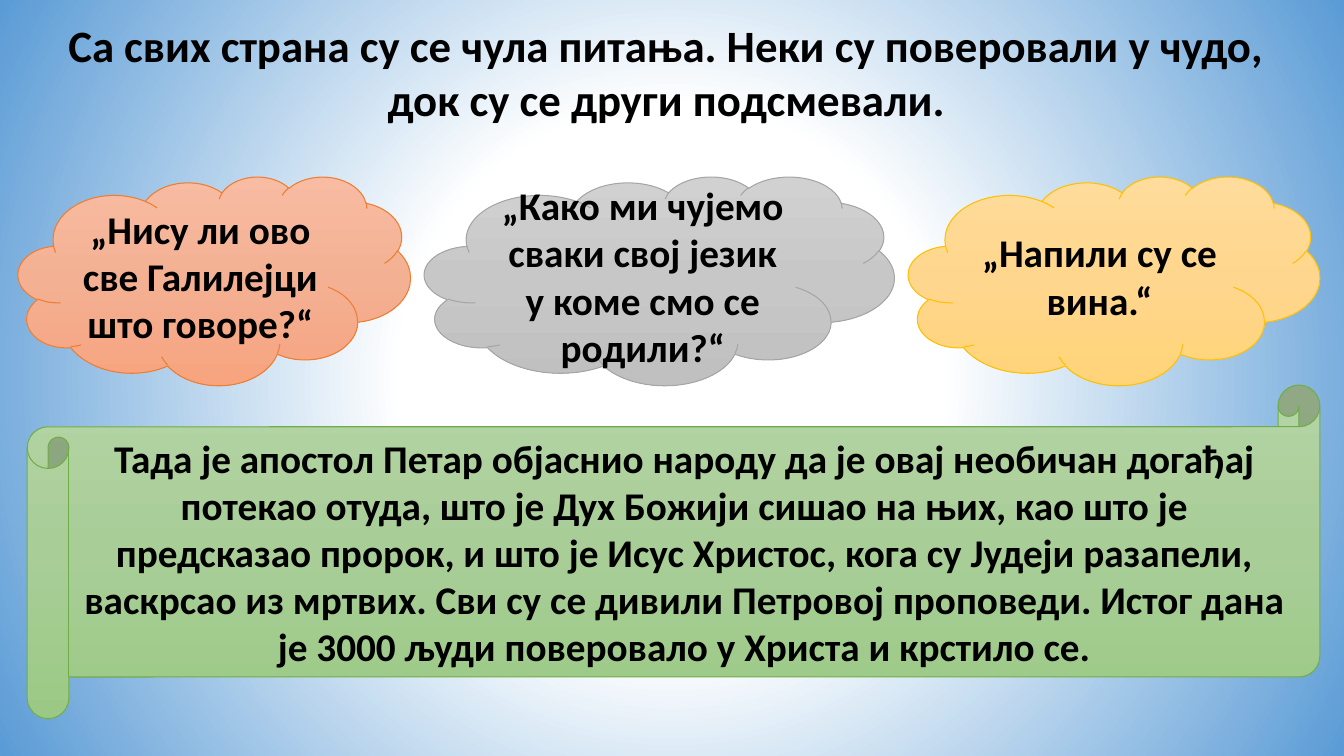
from lxml.etree import SubElement
from pptx import Presentation
from pptx.dml.color import RGBColor
from pptx.enum.shapes import MSO_SHAPE as Preset
from pptx.enum.text import MSO_ANCHOR as Anchor, PP_ALIGN as Align
from pptx.oxml.ns import qn
from pptx.util import Inches, Pt

FONT = "Calibri"
COLORS = {
    "text": "000000",
    "background": ["FFFFFF", "FFFFFF", "5A9BD5"],
    "orange": ["F7BCA2", "F4B093", "F7A47F"],
    "orange_line": "ED7D31",
    "gray": ["D1D1D1", "C7C7C7", "C0C0C0"],
    "gray_line": "A5A5A5",
    "gold": ["FFDC9B", "FFD68D", "FFD478"],
    "gold_line": "FFC000",
    "green": ["B4D4A5", "A8CD97", "9BC985"],
    "green_line": "70AD47",
}
HEADING = ("Са свих страна су се чула питања. Неки су поверовали у чудо, "
           "док су се други подсмевали.")
CLOUD_TOP, CLOUD_HEIGHT = 1.75, 2.07
# left, width, colour, question
CLOUDS = [
    (4.21, 4.66, "gray", "„Како ми чујемо сваки свој језик у коме смо се родили?“"),
    (9.01, 4.08, "gold", "„Напили су се вина.“"),
    (0.18, 3.89, "orange", "„Нису ли ово све Галилејци што говоре?“"),
]
SERMON = ("Тада је апостол Петар објаснио народу да је овај необичан догађај "
          "потекао отуда, што је Дух Божији сишао на њих, као што је "
          "предсказао пророк, и што је Исус Христос, кога су Јудеји разапели, "
          "васкрсао из мртвих. Сви су се дивили Петровој проповеди. "
          "Истог дана је 3000 људи поверовало у Христа и крстило се.")


def set_gradient(fill, owner, colors, middle=50, radial=False):
    """Fill with three colour stops, downwards or outwards from the centre."""
    fill.gradient()
    gradient = next(owner.iter(qn("a:gradFill")))
    gradient.clear()
    gradient.set("rotWithShape", "1")
    stops = SubElement(gradient, qn("a:gsLst"))
    for percent, color in zip((0, middle, 100), colors):
        stop = SubElement(stops, qn("a:gs"), pos=str(percent * 1000))
        SubElement(stop, qn("a:srgbClr"), val=color)
    if radial:
        circle = SubElement(gradient, qn("a:path"), {"path": "circle"})
        SubElement(circle, qn("a:fillToRect"), dict.fromkeys("ltrb", "50000"))
    else:
        SubElement(gradient, qn("a:lin"), ang="5400000", scaled="0")


def write_text(shape, text, size, anchor):
    frame = shape.text_frame
    frame.word_wrap = True
    frame.vertical_anchor = anchor
    frame.text = text
    paragraph = frame.paragraphs[0]
    paragraph.alignment = Align.CENTER
    font = paragraph.runs[0].font
    font.name, font.size, font.bold = FONT, Pt(size), True
    font.color.rgb = RGBColor.from_string(COLORS["text"])


def add_heading(slide, text, left, top, width, height):
    box = slide.shapes.add_textbox(*map(Inches, (left, top, width, height)))
    write_text(box, text, 32, Anchor.TOP)


def add_panel(slide, preset, text, color, left, top, width, height):
    panel = slide.shapes.add_shape(preset, *map(Inches, (left, top, width, height)))
    panel.shadow.inherit = False
    set_gradient(panel.fill, panel._element, COLORS[color])
    panel.line.color.rgb = RGBColor.from_string(COLORS[color + "_line"])
    panel.line.width = Pt(0.75)
    write_text(panel, text, 28, Anchor.MIDDLE)


def main():
    presentation = Presentation()
    presentation.slide_width = Inches(13.33)
    presentation.slide_height = Inches(7.5)
    slide = presentation.slides.add_slide(presentation.slide_layouts[6])
    set_gradient(slide.background.fill, slide._element, COLORS["background"],
                 middle=35, radial=True)
    add_heading(slide, HEADING, 0.27, 0.13, 12.68, 1.18)
    for left, width, color, question in CLOUDS:
        add_panel(slide, Preset.CLOUD, question, color,
                  left, CLOUD_TOP, width, CLOUD_HEIGHT)
    add_panel(slide, Preset.HORIZONTAL_SCROLL, SERMON, "green",
              0.27, 3.82, 12.82, 3.31)
    presentation.save("out.pptx")


if __name__ == "__main__":
    main()
